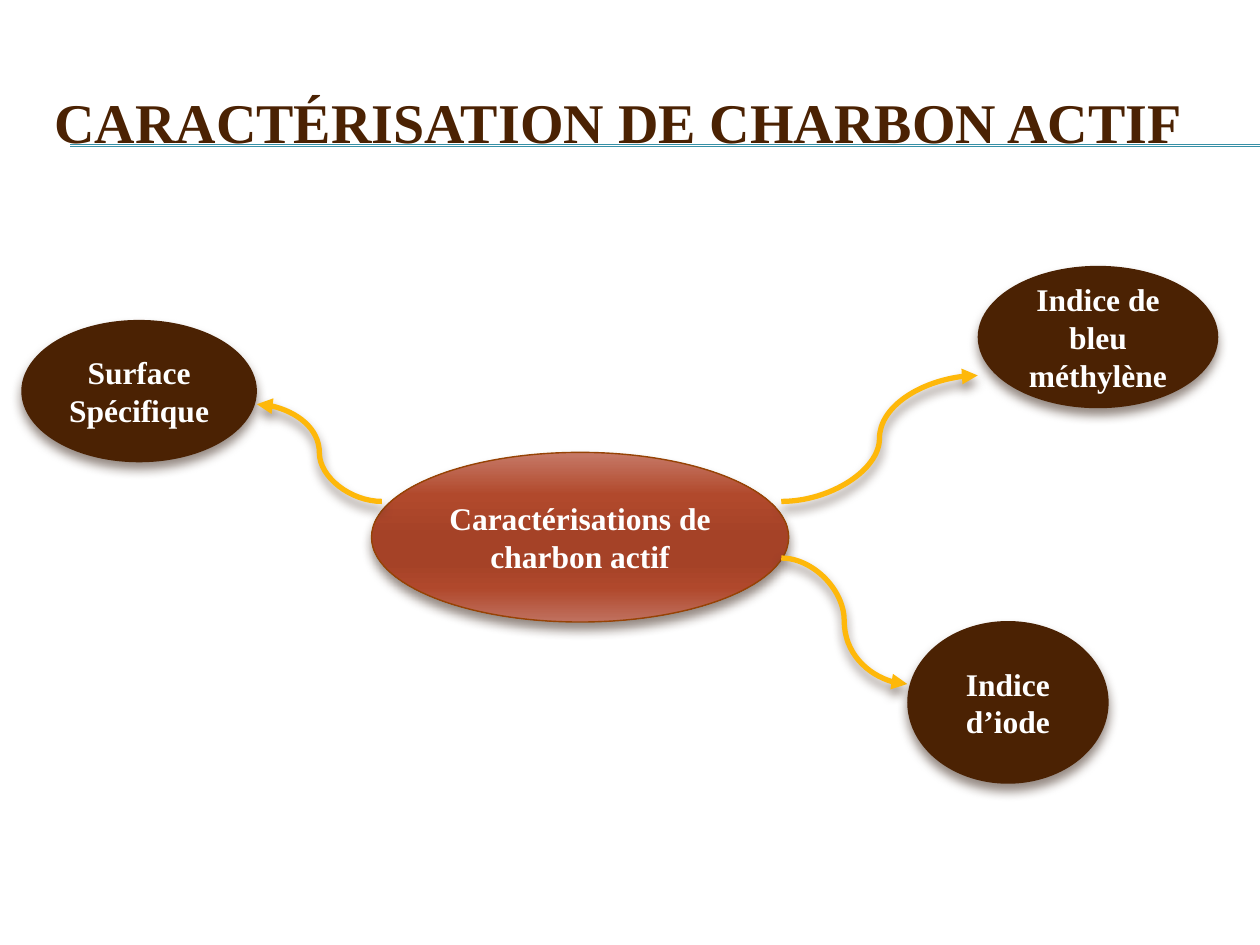
from lxml import etree
from pptx import Presentation
from pptx.dml.color import RGBColor
from pptx.enum.shapes import MSO_CONNECTOR, MSO_SHAPE
from pptx.enum.text import MSO_ANCHOR, PP_ALIGN
from pptx.oxml import parse_xml
from pptx.oxml.ns import nsdecls, qn
from pptx.util import Cm, Pt

STRAIGHT, CURVE = MSO_CONNECTOR.STRAIGHT, MSO_CONNECTOR.CURVE
ELLIPSE, NODE = MSO_SHAPE.OVAL, MSO_SHAPE.FLOWCHART_CONNECTOR
LEFT, CENTER = PP_ALIGN.LEFT, PP_ALIGN.CENTER
MIDDLE = MSO_ANCHOR.MIDDLE
TITLE_ONLY = 5


def color(value):
    return RGBColor.from_string(value)


class SlideBuilder:
    font = "Times New Roman"
    brown = "4B2203"
    white = "FFFFFF"
    teal = "3891A7"
    amber = "FEB80A"
    rust = "964305"
    shadow_color = "4E3B30"
    gradient = [(0, "C67967"), (25, "B1492C"), (50, "A54227"),
                (65, "A54227"), (80, "B0482C"), (100, "C0715F")]

    def __init__(self, presentation):
        self.slide = presentation.slides.add_slide(presentation.slide_layouts[TITLE_ONLY])

    def set_text(self, text_frame, text, size, font_color, alignment):
        text_frame.word_wrap = True
        text_frame.vertical_anchor = MIDDLE
        paragraph = text_frame.paragraphs[0]
        paragraph.text = text
        paragraph.alignment = alignment
        paragraph.font.name = self.font
        paragraph.font.size = Pt(size)
        paragraph.font.bold = True
        paragraph.font.color.rgb = color(font_color)

    def title(self, text, left, top, width, height):
        title = self.slide.shapes.title
        title.left, title.top = Cm(left), Cm(top)
        title.width, title.height = Cm(width), Cm(height)
        self.set_text(title.text_frame, text, 32, self.brown, LEFT)

    def add_shadow(self, effects):
        effects.append(parse_xml(
            f'<a:outerShdw {nsdecls("a")} blurRad="{Pt(6)}" dist="{Pt(4)}" dir="5400000" rotWithShape="0">'
            f'<a:srgbClr val="{self.shadow_color}"><a:alpha val="60000"/></a:srgbClr></a:outerShdw>'))

    def ellipse(self, kind, text, left, top, width, height):
        shape = self.slide.shapes.add_shape(kind, Cm(left), Cm(top), Cm(width), Cm(height))
        shape.fill.solid()
        shape.fill.fore_color.rgb = color(self.brown)
        shape.line.fill.background()
        shape.shadow.inherit = False
        self.add_shadow(shape._element.spPr.find(qn("a:effectLst")))
        self.set_text(shape.text_frame, text, 18, self.white, CENTER)
        return shape

    def gradient_ellipse(self, text, left, top, width, height):
        shape = self.ellipse(ELLIPSE, text, left, top, width, height)
        shape.fill.gradient()
        shape.fill.gradient_angle = 270
        stops = shape._element.spPr.find(".//" + qn("a:gsLst"))
        for stop in list(stops):
            stops.remove(stop)
        for position, value in self.gradient:
            stop = etree.SubElement(stops, qn("a:gs"), pos=str(position * 1000))
            etree.SubElement(stop, qn("a:srgbClr"), val=value)
        shape.line.color.rgb = color(self.rust)
        shape.line.width = Pt(0.79)

    def line(self, kind, start, end, line_color, width):
        points = [Cm(value) for value in (*start, *end)]
        connector = self.slide.shapes.add_connector(kind, *points)
        connector.line.color.rgb = color(line_color)
        connector.line.width = Pt(width)
        effects = etree.SubElement(connector._element.spPr, qn("a:effectLst"))
        return connector, effects

    def rule(self, top):
        self.line(STRAIGHT, (1.42, top), (25.4, top), self.teal, 0.75)

    def curved_arrow(self, start, end):
        connector, effects = self.line(CURVE, start, end, self.amber, 3)
        outline = connector._element.spPr.find(qn("a:ln"))
        etree.SubElement(outline, qn("a:tailEnd"), type="triangle")
        self.add_shadow(effects)


def main():
    presentation = Presentation()
    presentation.slide_width, presentation.slide_height = Cm(25.4), Cm(19.05)
    builder = SlideBuilder(presentation)
    for top in (2.92, 2.95):
        builder.rule(top)
    builder.title("CARACTÉRISATION DE CHARBON ACTIF", 0.84, 1.27, 24.13, 2.34)
    builder.gradient_ellipse("Caractérisations de charbon actif", 7.49, 9.12, 8.41, 3.42)
    builder.curved_arrow((15.75, 11.25), (18.29, 13.79))
    builder.ellipse(NODE, "Surface Spécifique", 0.43, 6.45, 4.75, 2.87)
    builder.ellipse(NODE, "Indice d’iode", 18.29, 12.52, 4.06, 3.28)
    builder.ellipse(NODE, "Indice de bleu méthylène", 19.71, 5.36, 4.85, 2.87)
    builder.curved_arrow((15.75, 10.11), (19.71, 7.57))
    builder.curved_arrow((7.7, 10.11), (5.18, 8.15))
    presentation.save("out.pptx")


if __name__ == "__main__":
    main()
